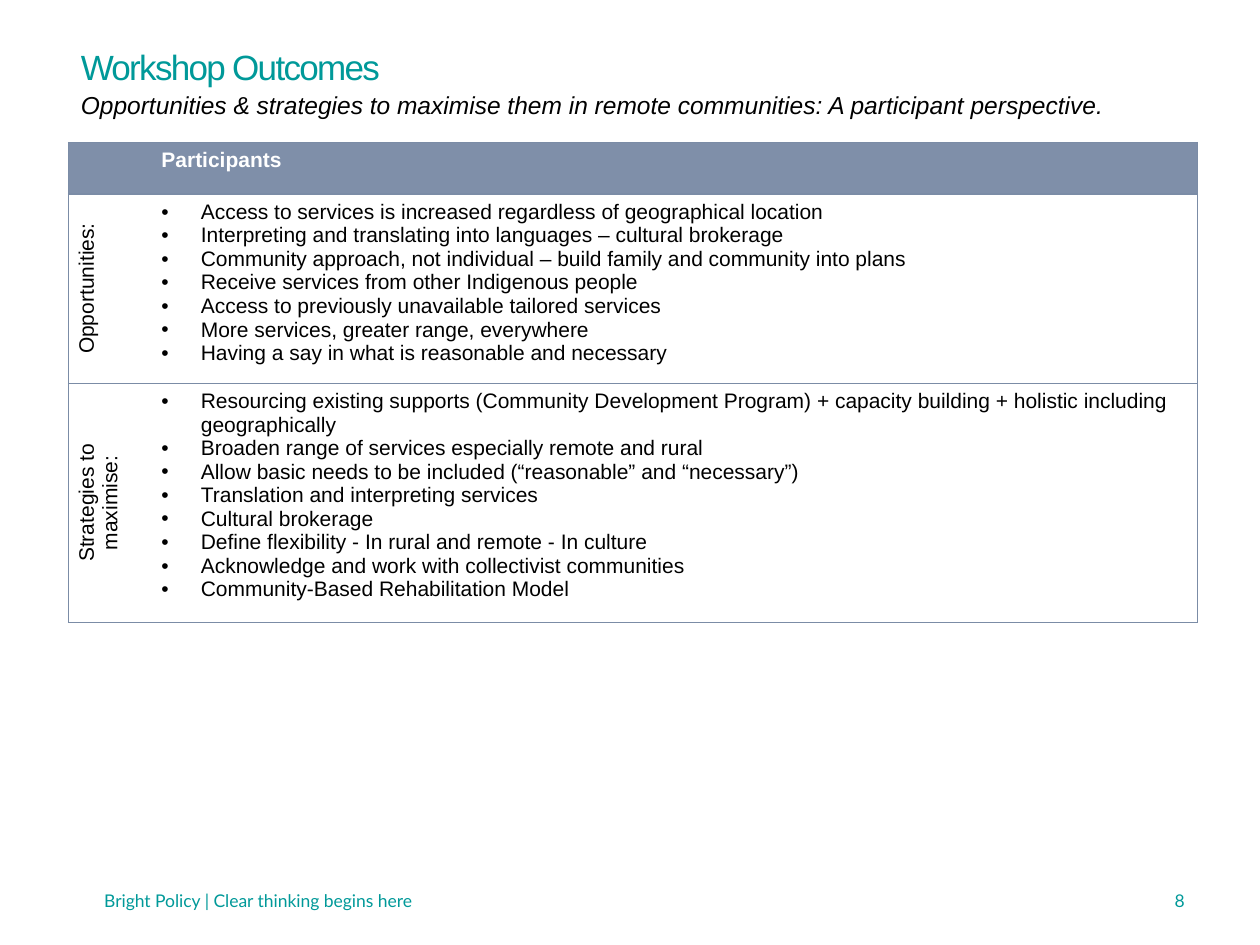
from lxml import etree
from pptx import Presentation
from pptx.dml.color import RGBColor
from pptx.enum.shapes import MSO_SHAPE
from pptx.enum.text import MSO_ANCHOR, PP_ALIGN
from pptx.oxml.ns import qn
from pptx.util import Pt

TEAL = RGBColor(0x00, 0x99, 0x99)
BLACK = RGBColor(0x00, 0x00, 0x00)
WHITE = RGBColor(0xFF, 0xFF, 0xFF)
HEADER = RGBColor(0x7F, 0x8F, 0xA9)
BORDER = RGBColor(0x7B, 0x8C, 0xA6)
LEFT, CENTER, RIGHT = PP_ALIGN.LEFT, PP_ALIGN.CENTER, PP_ALIGN.RIGHT
TOP, MIDDLE = MSO_ANCHOR.TOP, MSO_ANCHOR.MIDDLE
RECTANGLE = MSO_SHAPE.RECTANGLE
EDGE, WIDTH = 39.1, 645
INDENT = Pt(22.5)

ROWS = [
    ("Opportunities:", 108, [
        "Access to services is increased regardless of geographical location",
        "Interpreting and translating into languages – cultural brokerage",
        "Community approach, not individual – build family and community into plans",
        "Receive services from other Indigenous people",
        "Access to previously unavailable tailored services",
        "More services, greater range, everywhere",
        "Having a say in what is reasonable and necessary",
    ]),
    ("Strategies to maximise:", 137, [
        "Resourcing existing supports (Community Development Program) + "
        "capacity building + holistic including geographically",
        "Broaden range of services especially remote and rural",
        "Allow basic needs to be included (“reasonable” and “necessary”)",
        "Translation and interpreting services",
        "Cultural brokerage",
        "Define flexibility - In rural and remote - In culture",
        "Acknowledge and work with collectivist communities",
        "Community-Based Rehabilitation Model",
    ]),
]


def style(p, text, size, color, font="Arial", align=LEFT):
    p.text = text
    p.alignment = align
    p.font.name = font
    p.font.size = Pt(size)
    p.font.color.rgb = color


def add_borders(cell, open_side):
    tcPr = cell._tc.get_or_add_tcPr()
    for i, side in enumerate("LRTB"):
        ln = etree.Element(qn(f"a:ln{side}"), w=str(Pt(0.75)))
        if side == open_side:
            etree.SubElement(ln, qn("a:noFill"))
        else:
            fill = etree.SubElement(ln, qn("a:solidFill"))
            etree.SubElement(fill, qn("a:srgbClr"), val=str(BORDER))
        tcPr.insert(i, ln)  # borders come before the fill


prs = Presentation()
prs.slide_width, prs.slide_height = Pt(720), Pt(540)
s = prs.slides.add_slide(prs.slide_layouts[6])

# Title on a white band
sp = s.shapes.add_shape(RECTANGLE, Pt(EDGE), Pt(22.3), Pt(WIDTH), Pt(31.5))
sp.shadow.inherit = False
sp.fill.solid()
sp.fill.fore_color.rgb = WHITE
sp.line.fill.background()
sp.text_frame.vertical_anchor = TOP
p = sp.text_frame.paragraphs[0]
style(p, "Workshop Outcomes", 20, TEAL)
p.runs[0].font._element.set("spc", "-100")

# Subtitle, footer and page number
texts = [
    ("Opportunities & strategies to maximise them in remote communities: "
     "A participant perspective.",
     EDGE, 47.8, 635, 24.3, 14, BLACK, "Arial", LEFT, TOP),
    ("Bright Policy | Clear thinking begins here",
     EDGE, 500.4, 216.7, 28.8, 10, TEAL, "Lato", CENTER, MIDDLE),
    ("8", 516, 500.4, 168, 28.8, 10, TEAL, "Lato", RIGHT, MIDDLE),
]
for text, x, y, w, h, size, color, font, align, anchor in texts:
    tf = s.shapes.add_textbox(Pt(x), Pt(y), Pt(w), Pt(h)).text_frame
    tf.word_wrap = True
    tf.vertical_anchor = anchor
    p = tf.paragraphs[0]
    style(p, text, size, color, font, align)
    p.font.italic = color == BLACK

# Table grid
heights = [29.5] + [height for _, height, _ in ROWS]
fills = [HEADER] + [WHITE] * len(ROWS)
table = s.shapes.add_table(len(heights), 2, Pt(EDGE), Pt(81.4),
                           Pt(WIDTH), Pt(sum(heights))).table
table.columns[0].width, table.columns[1].width = Pt(46), Pt(WIDTH - 46)
for row, height, color in zip(table.rows, heights, fills):
    row.height = Pt(height)
    for cell, open_side in zip(row.cells, "RL"):
        cell.fill.solid()
        cell.fill.fore_color.rgb = color
        add_borders(cell, open_side)

# Header row
p = table.cell(0, 1).text_frame.paragraphs[0]
style(p, "Participants", 12, WHITE)
p.font.bold = True

# Rotated labels and bulleted lists
for i, (label, _, items) in enumerate(ROWS, start=1):
    cell = table.cell(i, 0)
    cell._tc.get_or_add_tcPr().set("vert", "vert270")
    p = cell.text_frame.paragraphs[0]
    style(p, label, 12, BLACK, align=CENTER)
    p.font.bold = False

    tf = table.cell(i, 1).text_frame
    for j, item in enumerate(items):
        p = tf.add_paragraph() if j else tf.paragraphs[0]
        style(p, item, 12, BLACK)
        pPr = p._p.get_or_add_pPr()
        pPr.set("marL", str(INDENT))
        pPr.set("indent", str(-INDENT))
        # Bullet font and sign come before the default text font
        pPr.insert(0, etree.Element(qn("a:buFont"), typeface="Arial"))
        pPr.insert(1, etree.Element(qn("a:buChar"), char="•"))

prs.save("out.pptx")
